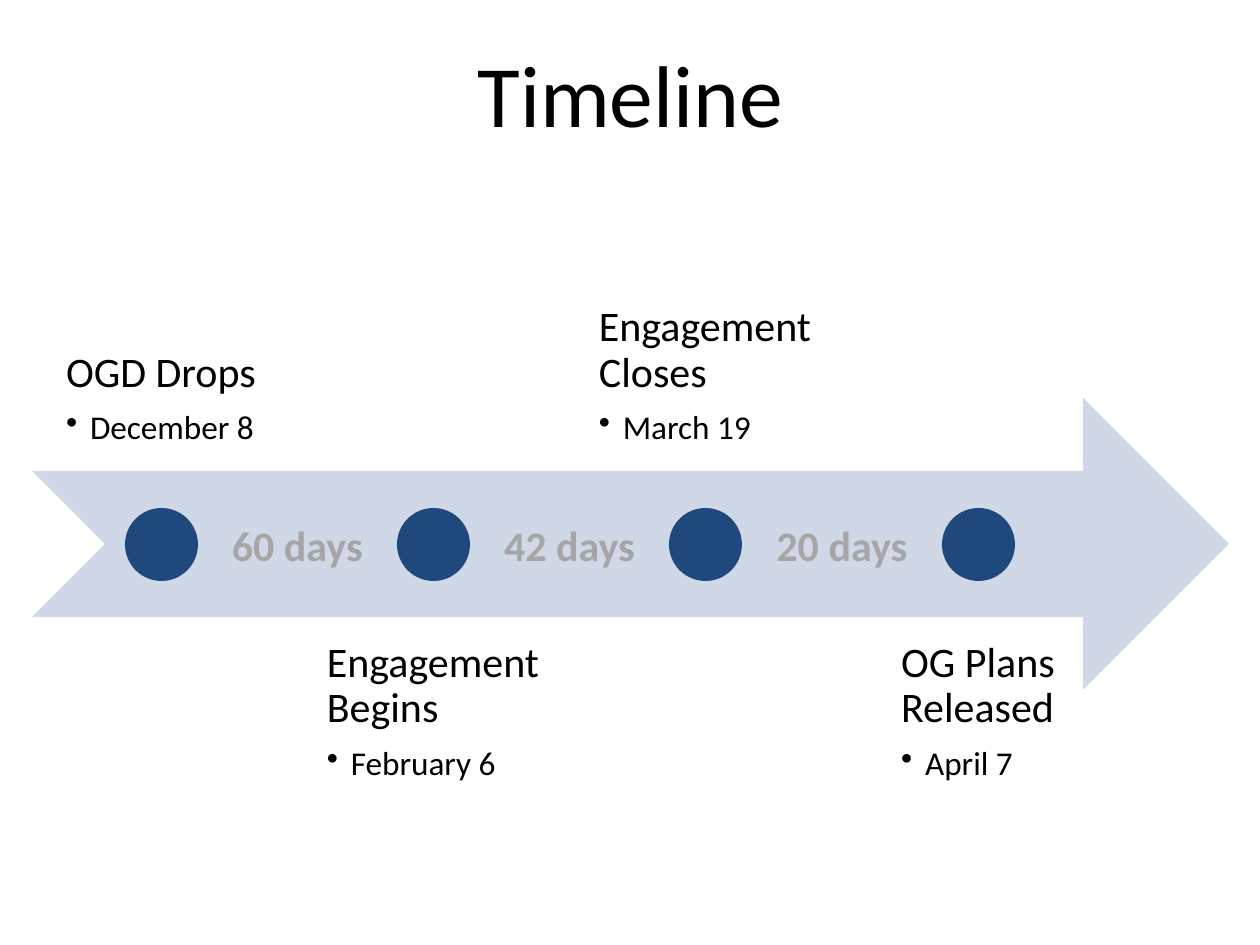
from dataclasses import dataclass

from lxml.etree import SubElement
from pptx import Presentation
from pptx.dml.color import RGBColor
from pptx.enum.shapes import MSO_SHAPE as Preset
from pptx.enum.text import MSO_ANCHOR as Anchor, PP_ALIGN as Align
from pptx.oxml.ns import qn
from pptx.util import Emu, Pt


@dataclass(frozen=True)
class Theme:
    font: str = "Calibri"
    ink: str = "000000"
    arrow: str = "D0D8E8"
    dot: str = "1F497D"
    muted: str = "A6A6A6"
    title_size: int = 50
    label_size: int = 24
    date_size: int = 19


@dataclass(frozen=True)
class Box:
    left: int
    top: int
    width: int
    height: int

    def emu(self):
        return [px(n) for n in (self.left, self.top, self.width, self.height)]


THEME = Theme()
MILESTONES = [
    ("OGD Drops", "December 8"),
    ("Engagement Begins", "February 6"),
    ("Engagement Closes", "March 19"),
    ("OG Plans Released", "April 7"),
]
INTERVALS = ["60 days", "42 days", "20 days"]


def px(length):
    return Emu(round(length * 914400 / 126))


def add_preset(page, preset, box, color):
    shape = page.shapes.add_shape(preset, *box.emu())
    shape.shadow.inherit = False
    shape.fill.solid()
    shape.fill.fore_color.rgb = RGBColor.from_string(color)
    shape.line.fill.background()


def add_text(page, box, text, anchor):
    frame = page.shapes.add_textbox(*box.emu()).text_frame
    frame.word_wrap = True
    frame.vertical_anchor = anchor
    frame.text = text
    return frame


def style(para, size, color=THEME.ink, bold=False, align=Align.LEFT):
    para.alignment = align
    for span in para.runs:
        span.font.name = THEME.font
        span.font.size = Pt(size)
        span.font.bold = bold
        span.font.color.rgb = RGBColor.from_string(color)


def add_title(page, box):
    frame = add_text(page, box, "Timeline", Anchor.MIDDLE)
    style(frame.paragraphs[0], THEME.title_size, align=Align.CENTER)


def add_milestone(page, box, name, date, anchor):
    frame = add_text(page, box, f"{name}\n{date}", anchor)
    frame.margin_left = frame.margin_right = px(23)
    frame.margin_top = frame.margin_bottom = px(24)
    # Centre the left-aligned block under or over its dot
    frame._txBody.bodyPr.set("anchorCtr", "1")

    heading, item = frame.paragraphs
    for para, size, gap in ((heading, THEME.label_size, 8.4),
                            (item, THEME.date_size, 2.85)):
        style(para, size)
        para.line_spacing = 0.9
        para.space_after = Pt(gap)

    # Bullet with a hanging indent
    item.level = 1
    props = item._p.get_or_add_pPr()
    props.set("marL", str(px(24)))
    props.set("indent", str(-px(24)))
    SubElement(props, qn("a:buChar")).set("char", "•")


def add_timeline(page, box):
    band = box.height // 2
    dot = box.height // 4
    middle = box.top + band
    dot_lefts = [box.left + 93 + i * 817 // 3 for i in range(len(MILESTONES))]

    # Arrow
    add_preset(page, Preset.NOTCHED_RIGHT_ARROW, box, THEME.arrow)

    # Dots, with labels alternating above and below the band
    label_width = 260
    for i, (left, (name, date)) in enumerate(zip(dot_lefts, MILESTONES)):
        above = i % 2 == 0
        top = middle - band // 2 - box.height if above else middle + band // 2
        label = Box(left + (dot - label_width) // 2, top, label_width, box.height)
        add_milestone(page, label, name, date, Anchor.BOTTOM if above else Anchor.TOP)
        add_preset(page, Preset.OVAL, Box(left, middle - dot // 2, dot, dot), THEME.dot)

    # Days between neighbouring dots
    for left, following, days in zip(dot_lefts, dot_lefts[1:], INTERVALS):
        gap = Box(left + dot, middle - 31, following - left - dot, 63)
        frame = add_text(page, gap, days, Anchor.TOP)
        style(frame.paragraphs[0], THEME.label_size, THEME.muted, True, Align.CENTER)


def main():
    deck = Presentation()
    deck.slide_width, deck.slide_height = px(1260), px(945)
    page = deck.slides.add_slide(deck.slide_layouts[6])
    add_title(page, Box(32, 30, 1197, 126))
    add_timeline(page, Box(32, 398, 1197, 292))
    deck.save("out.pptx")


if __name__ == "__main__":
    main()
